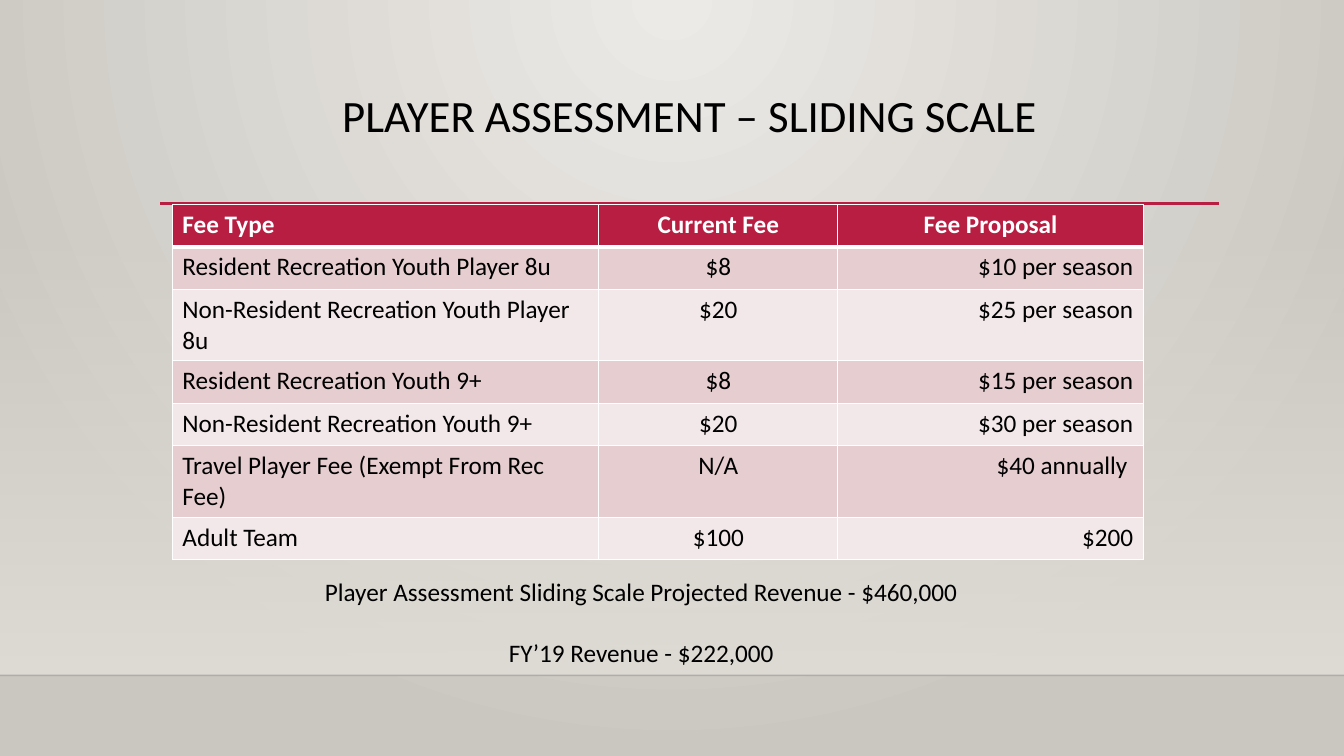
from lxml.etree import SubElement
from pptx import Presentation
from pptx.dml.color import RGBColor
from pptx.enum.shapes import MSO_CONNECTOR, MSO_SHAPE
from pptx.enum.text import MSO_ANCHOR, PP_ALIGN
from pptx.oxml.ns import qn
from pptx.util import Inches, Pt

CRIMSON = "B71E42"
WHITE = "FFFFFF"
BLACK = "000000"
BANDS = ("E6CDCF", "F3E8E9")
SLIDE_WIDTH, SLIDE_HEIGHT = 13.33, 7.5
FLOOR_TOP = 6.7
COLUMN_WIDTHS = (4.23, 2.37, 3.03)
ROW_HEIGHTS = (0.42, 0.42, 0.66, 0.42, 0.42, 0.66, 0.42)
FEES = (
    ("Fee Type", "Current Fee", "Fee Proposal"),
    ("Resident Recreation Youth Player 8u", "$8", "$10 per season"),
    ("Non-Resident Recreation Youth Player 8u", "$20", "$25 per season"),
    ("Resident Recreation Youth 9+", "$8", "$15 per season"),
    ("Non-Resident Recreation Youth 9+", "$20", "$30 per season"),
    ("Travel Player Fee (Exempt From Rec Fee)", "N/A", "$40 annually "),
    ("Adult Team", "$100", "$200"),
)
REVENUES = (
    "Player Assessment Sliding Scale Projected Revenue - $460,000",
    "FY’19 Revenue - $222,000",
)


def color(value):
    return RGBColor.from_string(value)


def set_alpha(element, percent):
    color_element = next(element.iter(qn("a:srgbClr")))
    SubElement(color_element, qn("a:alpha"), val=str(percent * 1000))


def set_gradient(fill, start, end):
    fill.gradient()
    for stop, value in zip(fill.gradient_stops, (start, end)):
        stop.color.rgb = color(value)


def format_paragraph(paragraph, size, value, alignment, bold=False):
    paragraph.alignment = alignment
    for run in paragraph.runs:
        run.font.name = "Calibri"
        run.font.size = Pt(size)
        run.font.bold = bold
        run.font.color.rgb = color(value)


def add_rule(slide, left, top, width, value, weight):
    y = Inches(top)
    rule = slide.shapes.add_connector(
        MSO_CONNECTOR.STRAIGHT, Inches(left), y, Inches(left + width), y)
    rule.line.color.rgb = color(value)
    rule.line.width = Pt(weight)
    SubElement(rule._element.spPr, qn("a:effectLst"))
    return rule


def add_backdrop(slide):
    set_gradient(slide.background.fill, "ECEAE7", "CAC7C1")
    gradient = next(slide._element.iter(qn("a:gradFill")))
    gradient.remove(gradient.find(qn("a:lin")))
    circle = SubElement(gradient, qn("a:path"), {"path": "circle"})
    SubElement(circle, qn("a:fillToRect"), l="43000", t="0", r="43000", b="100000")

    wall_top = 2.21
    wall = slide.shapes.add_shape(
        MSO_SHAPE.RECTANGLE, 0, Inches(wall_top),
        Inches(SLIDE_WIDTH), Inches(FLOOR_TOP - wall_top))
    wall.shadow.inherit = False
    wall.line.fill.background()
    set_gradient(wall.fill, "DFDBD5", "DFDBD5")
    wall.fill.gradient_angle = 270
    set_alpha(wall._element.spPr, 0)

    floor_line = add_rule(slide, 0, FLOOR_TOP, SLIDE_WIDTH, "000001", 1)
    set_alpha(floor_line._element.spPr, 20)


def add_title(slide, left, top, width, height):
    title = slide.shapes.title
    title.left, title.top = Inches(left), Inches(top)
    title.width, title.height = Inches(width), Inches(height)
    frame = title.text_frame
    frame.text = "PLAYER ASSESSMENT – SLIDING SCALE"
    frame.word_wrap = True
    frame.vertical_anchor = MSO_ANCHOR.TOP
    paragraph = frame.paragraphs[0]
    paragraph.line_spacing = 0.9
    format_paragraph(paragraph, 32, BLACK, PP_ALIGN.CENTER)
    add_rule(slide, left, top + height - 0.01, width, CRIMSON, 2.5)


def set_borders(cell, top, bottom):
    properties = cell._tc.get_or_add_tcPr()
    for side, weight in (("L", 1), ("R", 1), ("T", top), ("B", bottom)):
        border = SubElement(properties, qn(f"a:ln{side}"), w=str(Pt(weight)))
        fill = SubElement(border, qn("a:solidFill"))
        SubElement(fill, qn("a:srgbClr"), val=WHITE)


def add_fee_table(slide, left, top):
    table = slide.shapes.add_table(
        len(FEES), len(COLUMN_WIDTHS), Inches(left), Inches(top),
        Inches(sum(COLUMN_WIDTHS)), Inches(sum(ROW_HEIGHTS))).table
    for column, width in zip(table.columns, COLUMN_WIDTHS):
        column.width = Inches(width)
    for row, height in zip(table.rows, ROW_HEIGHTS):
        row.height = Inches(height)

    for row_index, values in enumerate(FEES):
        header = row_index == 0
        last = PP_ALIGN.CENTER if header else PP_ALIGN.RIGHT
        alignments = (PP_ALIGN.LEFT, PP_ALIGN.CENTER, last)
        for column_index, value in enumerate(values):
            cell = table.cell(row_index, column_index)
            set_borders(cell, 3 if row_index == 1 else 1, 3 if header else 1)
            cell.fill.solid()
            cell.fill.fore_color.rgb = color(
                CRIMSON if header else BANDS[(row_index - 1) % 2])
            cell.text_frame.text = value
            format_paragraph(
                cell.text_frame.paragraphs[0], 18, WHITE if header else BLACK,
                alignments[column_index], header)


def add_revenue_note(slide, left, top, width, height):
    note = slide.shapes.add_textbox(
        Inches(left), Inches(top), Inches(width), Inches(height))
    frame = note.text_frame
    frame.word_wrap = True
    frame.text = "\n".join(REVENUES)
    for paragraph in frame.paragraphs:
        format_paragraph(paragraph, 18, BLACK, PP_ALIGN.CENTER)
    frame.paragraphs[1].space_before = Pt(22)


def main():
    presentation = Presentation()
    presentation.slide_width = Inches(SLIDE_WIDTH)
    presentation.slide_height = Inches(SLIDE_HEIGHT)
    slide = presentation.slides.add_slide(presentation.slide_layouts[5])
    add_backdrop(slide)
    add_title(slide, 1.59, 0.88, 10.5, 1.15)
    add_fee_table(slide, 1.71, 2.03)
    add_revenue_note(slide, 1.59, 5.67, 9.54, 1.31)
    presentation.save("out.pptx")


if __name__ == "__main__":
    main()
